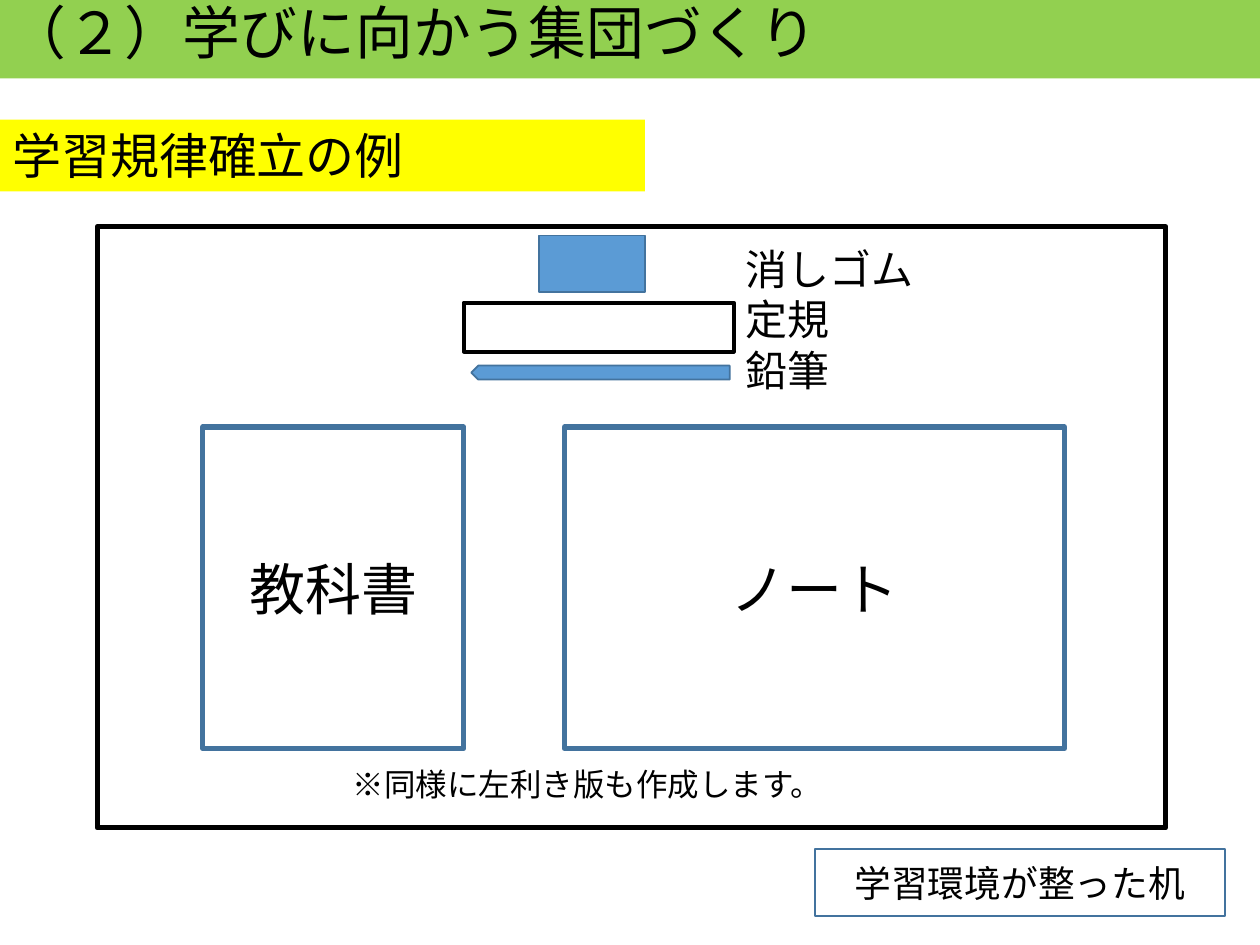
from pptx import Presentation
from pptx.dml.color import RGBColor as RGB
from pptx.enum.shapes import MSO_SHAPE as Kind
from pptx.enum.text import MSO_ANCHOR as Anchor, PP_ALIGN as Align
from pptx.util import Cm, Pt


def paint(shape, fill, line=None, width=1):
    if fill:
        shape.fill.solid()
        shape.fill.fore_color.rgb = RGB.from_string(fill)
    else:
        shape.fill.background()
    if line:
        shape.line.color.rgb = RGB.from_string(line)
        shape.line.width = Pt(width)
    else:
        shape.line.fill.background()


def write(shape, lines, size, align=Align.LEFT, anchor=Anchor.TOP, font="Calibri"):
    frame = shape.text_frame
    frame.word_wrap = True
    frame.vertical_anchor = anchor
    for i, line in enumerate(lines):
        para = frame.paragraphs[0] if i == 0 else frame.add_paragraph()
        para.alignment = align
        run = para.add_run()
        run.text = line
        run.font.size = Pt(size)
        run.font.name = font
        run.font.color.rgb = RGB.from_string("000000")


WHITE, BLACK, BLUE, EDGE = "FFFFFF", "000000", "5B9BD5", "43739E"

deck = Presentation()
deck.slide_width, deck.slide_height = Cm(25.4), Cm(19.05)
slide = deck.slides.add_slide(deck.slide_layouts[5])
shapes = slide.shapes

title = shapes.title
title.left, title.top, title.width, title.height = Cm(0), Cm(-0.15), Cm(25.4), Cm(1.73)
paint(title, "92D050")
write(title, ["（２）学びに向かう集団づくり"], 33, anchor=Anchor.MIDDLE, font="Arial")
frame = title.text_frame
frame.margin_left = frame.margin_right = Cm(0.18)
frame.margin_top = frame.margin_bottom = Cm(0.1)
frame.paragraphs[0].line_spacing = 0.9

desk = (1.96, 4.57, 21.54, 12.12)
ruler = (9.35, 6.1, 5.44, 0.99)
eraser = (10.87, 4.75, 2.13, 1.14)
pencil = (9.5, 7.37, 5.21, 0.28)
for kind, box, fill, line, width, turn in [
    (Kind.RECTANGLE, desk, None, BLACK, 3, 0),
    (Kind.RECTANGLE, ruler, WHITE, BLACK, 2.25, 0),
    (Kind.PENTAGON, pencil, BLUE, EDGE, 1, 180),
    (Kind.RECTANGLE, eraser, BLUE, EDGE, 1, 0),
]:
    shape = shapes.add_shape(kind, *map(Cm, box))
    shape.shadow.inherit = False
    shape.rotation = turn
    paint(shape, fill, line, width)

mid = (Align.CENTER, Anchor.MIDDLE)
top = (Align.LEFT, Anchor.TOP)
for text, box, fill, line, width, size, place in [
    ("学習規律確立の例", (0, 2.41, 13, 1.45), "FFFF00", None, 0, 28, top),
    ("教科書", (4.09, 8.61, 5.26, 6.48), WHITE, EDGE, 3, 32, mid),
    ("ノート", (11.38, 8.61, 10.08, 6.48), WHITE, EDGE, 3, 32, mid),
    ("学習環境が整った机", (16.43, 17.12, 8.26, 1.35), WHITE, EDGE, 1, 21, mid),
]:
    shape = shapes.add_shape(Kind.RECTANGLE, *map(Cm, box))
    shape.shadow.inherit = False
    paint(shape, fill, line, width)
    write(shape, [text], size, *place)

for lines, box, size in [
    (["消しゴム", "定規", "鉛筆"], (14.78, 4.78, 5.94, 3.33), 24),
    (["※同様に左利き版も作成します。"], (6.86, 15.29, 14.25, 1.02), 18),
]:
    write(shapes.add_textbox(*map(Cm, box)), lines, size)

deck.save("out.pptx")
